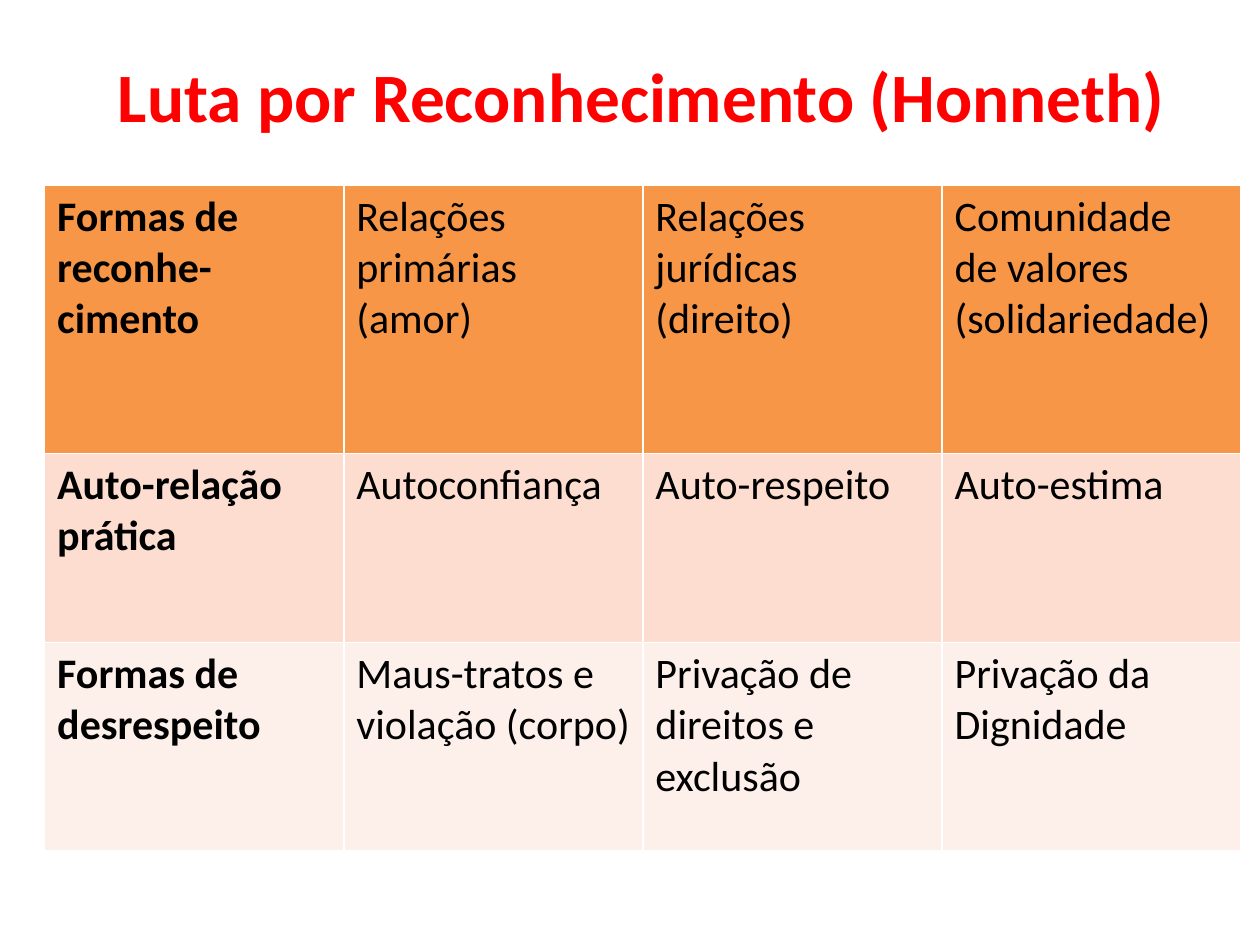
from pptx import Presentation
from pptx import util as u
from pptx.dml.color import RGBColor
from pptx.enum import text

FONT = "Calibri"
TITLE = "Luta por Reconhecimento (Honneth)"
COLUMN_WIDTH = 6.03
ROW_HEIGHTS = [5.41, 3.81, 4.19]
ROW_FILLS = ["F79646", "FCDDCF", "FDEFE9"]
# A line break in a cell starts a new paragraph.
ROWS = [
    ["Formas de reconhe-\ncimento", "Relações\nprimárias\n(amor)",
     "Relações\njurídicas\n(direito)", "Comunidade\nde valores (solidariedade)"],
    ["Auto-relação\nprática", "Autoconfiança", "Auto-respeito", "Auto-estima"],
    ["Formas de desrespeito", "Maus-tratos e violação (corpo)",
     "Privação de direitos e exclusão", "Privação da\nDignidade"],
]


def rgb(value):
    return RGBColor.from_string(value)


def format_runs(tf, size, color, bold):
    for p in tf.paragraphs:
        for r in p.runs:
            r.font.name = FONT
            r.font.size = u.Pt(size)
            r.font.bold = bold
            r.font.color.rgb = rgb(color)


def add_title(s):
    sp = s.shapes.add_textbox(u.Cm(1.5), u.Cm(0.33), u.Cm(22.86), u.Cm(3.18))
    tf = sp.text_frame
    tf.word_wrap = True
    tf.vertical_anchor = text.MSO_ANCHOR.MIDDLE
    tf.text = TITLE
    tf.paragraphs[0].alignment = text.PP_ALIGN.CENTER
    format_runs(tf, 39.6, "FF0000", True)


def fill_cell(cell, content, fill, bold):
    cell.fill.solid()
    cell.fill.fore_color.rgb = rgb(fill)
    cell.text_frame.text = content
    format_runs(cell.text_frame, 24, "000000", bold)


def add_recognition_table(s):
    """The default table style supplies the white borders."""
    columns = len(ROWS[0])
    table = s.shapes.add_table(
        len(ROWS), columns, u.Cm(0.9), u.Cm(3.73),
        u.Cm(COLUMN_WIDTH * columns), u.Cm(sum(ROW_HEIGHTS))).table
    for column in table.columns:
        column.width = u.Cm(COLUMN_WIDTH)
    for i, (contents, height, fill) in enumerate(zip(ROWS, ROW_HEIGHTS, ROW_FILLS)):
        table.rows[i].height = u.Cm(height)
        for j, content in enumerate(contents):
            fill_cell(table.cell(i, j), content, fill, bold=j == 0)


def main():
    prs = Presentation()
    prs.slide_width, prs.slide_height = u.Cm(25.4), u.Cm(19.05)
    s = prs.slides.add_slide(prs.slide_layouts[6])
    add_title(s)
    add_recognition_table(s)
    prs.save("out.pptx")


if __name__ == "__main__":
    main()
